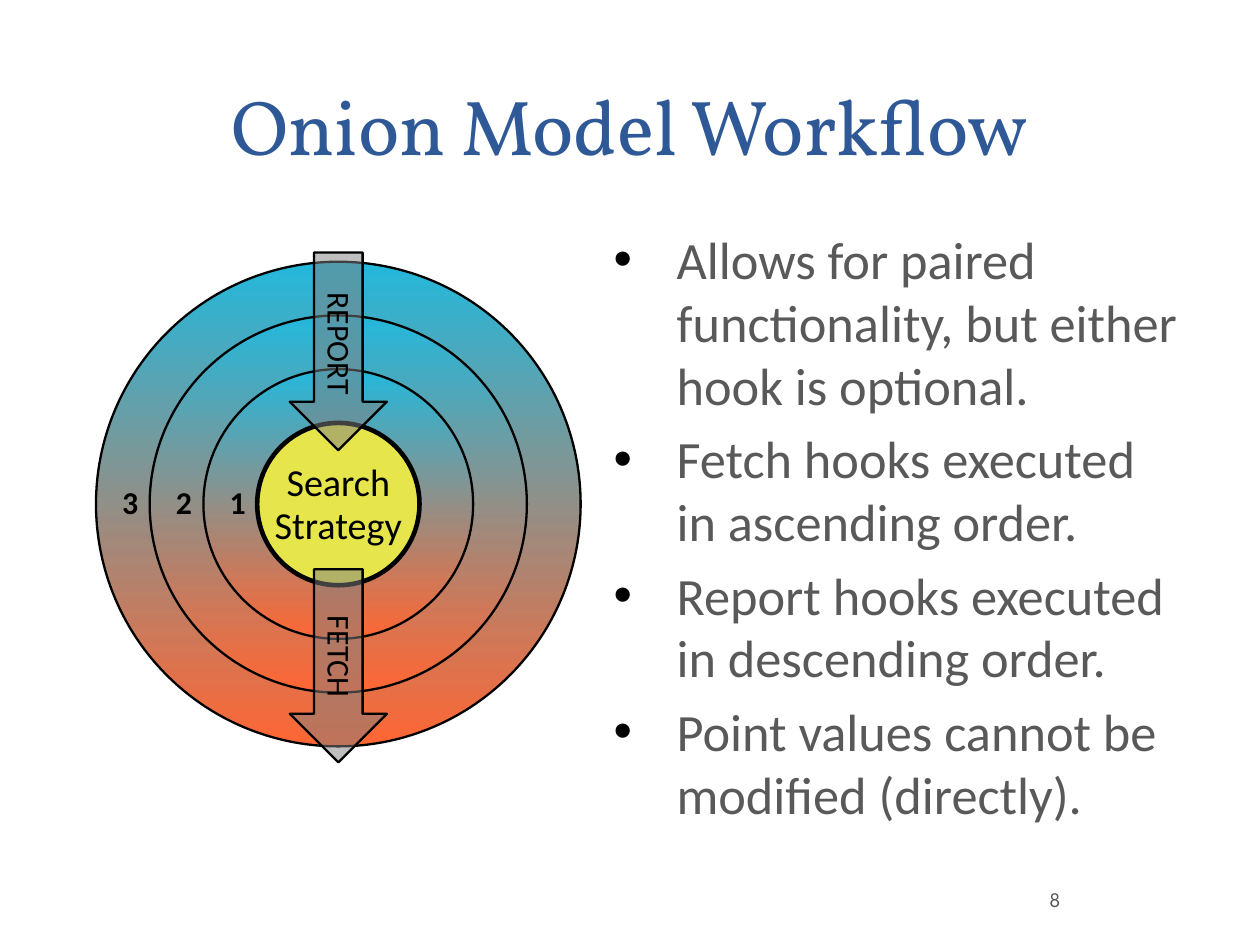
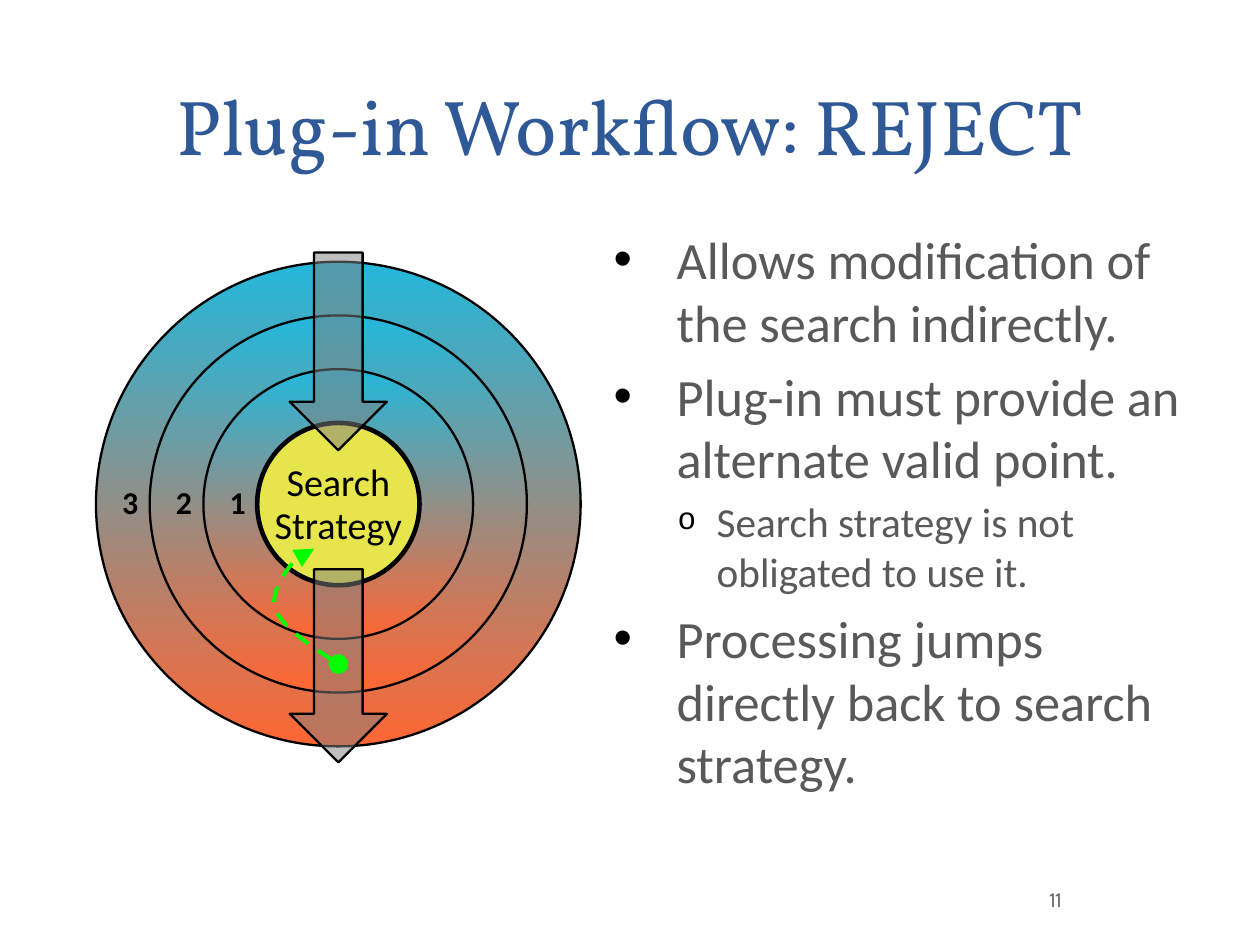
from dataclasses import dataclass

from lxml import etree
from pptx import Presentation
from pptx.dml.color import RGBColor
from pptx.enum.dml import MSO_LINE
from pptx.enum.shapes import MSO_SHAPE
from pptx.enum.text import MSO_ANCHOR, MSO_AUTO_SIZE, PP_ALIGN
from pptx.oxml.ns import qn
from pptx.shapes.autoshape import Shape
from pptx.slide import Slide
from pptx.text.text import TextFrame
from pptx.util import Inches, Pt

ELLIPSE = MSO_SHAPE.OVAL
DOWN_ARROW = MSO_SHAPE.DOWN_ARROW
MIDDLE = MSO_ANCHOR.MIDDLE
TOP = MSO_ANCHOR.TOP
LEFT = PP_ALIGN.LEFT
CENTER = PP_ALIGN.CENTER
GROW = MSO_AUTO_SIZE.SHAPE_TO_FIT_TEXT
DASH = MSO_LINE.DASH

BLUE = RGBColor(0x2F, 0x58, 0x97)
GRAY = RGBColor(0x59, 0x59, 0x59)
BLACK = RGBColor(0, 0, 0)
REPORT_CYAN = RGBColor(0x23, 0xB8, 0xDC)
FETCH_ORANGE = RGBColor(0xFF, 0x66, 0x33)
CORE_YELLOW = RGBColor(0xE6, 0xE6, 0x4C)
ARROW_GRAY = RGBColor(0x80, 0x80, 0x80)
JUMP_GREEN = RGBColor(0, 0xFF, 0)

TITLE_FONT = "Vollkorn"
BODY_FONT = "Calibri"
NUMBER_FONT = "League Spartan"

CM_PER_INCH = 2.54
SLIDE_WIDTH = Inches(28 / CM_PER_INCH)
SLIDE_HEIGHT = Inches(21 / CM_PER_INCH)

CENTER_X, CENTER_Y = 2.96, 4.41
OUTER_DIAMETER, DIAMETER_STEP = 4.24, 0.94
RING_LABELS = ("3", "2", "1")
DIAGRAM_SPACING = 0.93
CURVE_STEPS = 12

Point = tuple[float, float]


@dataclass(frozen=True)
class TextStyle:
    font: str
    size: float
    color: RGBColor
    bold: bool = False
    align: PP_ALIGN = LEFT
    spacing: float | Pt | None = None


@dataclass(frozen=True)
class BulletStyle:
    mark: str
    mark_font: str
    margin: float
    hanging: float
    before: float
    size: int
    mark_percent: int = 100


@dataclass(frozen=True)
class Bullet:
    text: str
    level: int = 0


@dataclass(frozen=True)
class FlowArrow:
    top: float
    height: float
    label: str
    indent: float


@dataclass(frozen=True)
class WorkflowSlide:
    title: str
    number: str
    bullets: tuple[Bullet, ...]
    labelled_arrows: bool = False
    jump: tuple[tuple[Point, Point, Point, Point], ...] = ()


TITLE = TextStyle(TITLE_FONT, 49, BLUE, align=CENTER, spacing=Pt(63.8))
NUMBER = TextStyle(NUMBER_FONT, 13, GRAY)
CORE = TextStyle(BODY_FONT, 24, BLACK, align=CENTER, spacing=DIAGRAM_SPACING)
ARROW = TextStyle(BODY_FONT, 20, BLACK, spacing=DIAGRAM_SPACING)
RING = TextStyle(BODY_FONT, 20, BLACK, True, CENTER, DIAGRAM_SPACING)

BULLET_STYLES = (
    BulletStyle("•", "Arial", 0.55, 0.55, 6.6, 33),
    BulletStyle("o", "Courier New", 0.9, 0.34, 4.4, 26, 75),
)

ARROWS = (
    FlowArrow(4.98, 1.69, "FETCH", 0.31),
    FlowArrow(2.21, 1.73, "REPORT", 0.25),
)

SLIDES = (
    WorkflowSlide(
        "Onion Model Workflow",
        "8",
        (
            Bullet("Allows for paired functionality, but either hook is optional."),
            Bullet("Fetch hooks executed in ascending order."),
            Bullet("Report hooks executed in descending order."),
            Bullet("Point values cannot be modified (directly)."),
        ),
        labelled_arrows=True,
    ),
    WorkflowSlide(
        "Plug-in Workflow: REJECT",
        "11",
        (
            Bullet("Allows modification of the search indirectly."),
            Bullet("Plug-in must provide an alternate valid point."),
            Bullet("Search strategy is not obligated to use it.", 1),
            Bullet("Processing jumps directly back to search strategy."),
        ),
        jump=(
            ((2.96, 5.81), (2.7, 5.64), (2.44, 5.47), (2.4, 5.3)),
            ((2.4, 5.3), (2.37, 5.14), (2.59, 4.82), (2.75, 4.8)),
        ),
    ),
)


def set_insets(frame: TextFrame, left: float, top: float, right: float, bottom: float) -> None:
    frame.margin_left, frame.margin_top = Inches(left), Inches(top)
    frame.margin_right, frame.margin_bottom = Inches(right), Inches(bottom)


def write_lines(frame: TextFrame, lines: tuple[str, ...], style: TextStyle) -> None:
    frame.text = "\n".join(lines)
    for paragraph in frame.paragraphs:
        paragraph.alignment = style.align
        paragraph.line_spacing = style.spacing
        paragraph.font.name = style.font
        paragraph.font.size = Pt(style.size)
        paragraph.font.bold = style.bold
        paragraph.font.color.rgb = style.color


def add_text_frame(slide: Slide, left: float, top: float, width: float, height: float,
                   anchor: MSO_ANCHOR = TOP) -> TextFrame:
    frame = slide.shapes.add_textbox(
        Inches(left), Inches(top), Inches(width), Inches(height)).text_frame
    frame.word_wrap = True
    frame.vertical_anchor = anchor
    return frame


def add_outlined(slide: Slide, preset: MSO_SHAPE, left: float, top: float,
                 width: float, height: float, line_width: float = 1.45) -> Shape:
    shape = slide.shapes.add_shape(
        preset, Inches(left), Inches(top), Inches(width), Inches(height))
    shape.shadow.inherit = False
    shape.line.color.rgb = BLACK
    shape.line.width = Pt(line_width)
    return shape


def add_circle(slide: Slide, diameter: float, line_width: float = 1.45) -> Shape:
    radius = diameter / 2
    return add_outlined(slide, ELLIPSE, CENTER_X - radius, CENTER_Y - radius,
                        diameter, diameter, line_width)


def add_onion(slide: Slide) -> None:
    for ring in range(len(RING_LABELS)):
        layer = add_circle(slide, OUTER_DIAMETER - ring * DIAMETER_STEP)
        layer.fill.gradient()
        layer.fill.gradient_angle = 270
        for stop, position, color in zip(
                layer.fill.gradient_stops, (0, 1), (REPORT_CYAN, FETCH_ORANGE)):
            stop.position = position
            stop.color.rgb = color
    core = add_circle(slide, OUTER_DIAMETER - len(RING_LABELS) * DIAMETER_STEP, 2.89)
    core.fill.solid()
    core.fill.fore_color.rgb = CORE_YELLOW
    frame = core.text_frame
    frame.word_wrap = False
    frame.vertical_anchor = MIDDLE
    set_insets(frame, 0.12, 0.09, 0.12, 0.07)
    write_lines(frame, ("Search", "Strategy"), CORE)


def add_flow_arrow(slide: Slide, arrow: FlowArrow, labelled: bool) -> None:
    width = 0.85
    shape = add_outlined(slide, DOWN_ARROW, CENTER_X - width / 2, arrow.top,
                         width, arrow.height)
    shape.adjustments[0] = 0.5
    shape.adjustments[1] = 0.5
    shape.fill.solid()
    shape.fill.fore_color.rgb = ARROW_GRAY
    tint = shape._element.spPr.find(qn("a:solidFill")).find(qn("a:srgbClr"))
    etree.SubElement(tint, qn("a:alpha"), val="50000")
    if labelled:
        frame = shape.text_frame
        frame.word_wrap = True
        frame.vertical_anchor = MIDDLE
        frame._txBody.bodyPr.set("vert", "vert")
        write_lines(frame, (arrow.label,), ARROW)
        properties = frame.paragraphs[0]._p.get_or_add_pPr()
        properties.set("marL", str(Inches(arrow.indent)))


def add_ring_labels(slide: Slide) -> None:
    for ring, label in enumerate(RING_LABELS):
        frame = add_text_frame(slide, 0.97 + ring * DIAMETER_STEP / 2, 4.2, 0.25, 0.41)
        frame.auto_size = GROW
        write_lines(frame, (label,), RING)


def add_bullets(slide: Slide, bullets: tuple[Bullet, ...]) -> None:
    frame = add_text_frame(slide, 5.26, 1.93, 5.2, 5.45)
    set_insets(frame, 0.11, 0.06, 0.11, 0.06)
    for index, bullet in enumerate(bullets):
        style = BULLET_STYLES[bullet.level]
        paragraph = frame.add_paragraph() if index else frame.paragraphs[0]
        paragraph.text = bullet.text
        paragraph.level = bullet.level
        properties = paragraph._p.get_or_add_pPr()
        properties.set("marL", str(Inches(style.margin)))
        properties.set("indent", str(-Inches(style.hanging)))
        mark_color = etree.SubElement(properties, qn("a:buClr"))
        etree.SubElement(mark_color, qn("a:srgbClr"), val=str(BLACK))
        etree.SubElement(properties, qn("a:buSzPct"), val=str(style.mark_percent * 1000))
        etree.SubElement(properties, qn("a:buFont"), typeface=style.mark_font)
        etree.SubElement(properties, qn("a:buChar"), char=style.mark)
        if index:
            paragraph.space_before = Pt(style.before)
        paragraph.font.name = BODY_FONT
        paragraph.font.size = Pt(style.size)
        paragraph.font.color.rgb = GRAY


def curve_point(a: Point, b: Point, c: Point, d: Point, t: float) -> tuple[int, int]:
    u = 1 - t
    x, y = (u**3 * p + 3 * u**2 * t * q + 3 * u * t**2 * r + t**3 * s
            for p, q, r, s in zip(a, b, c, d))
    return Inches(x), Inches(y)


def add_jump(slide: Slide, curves: tuple[tuple[Point, Point, Point, Point], ...]) -> None:
    start_x, start_y = curves[0][0]
    builder = slide.shapes.build_freeform(Inches(start_x), Inches(start_y))
    builder.add_line_segments(
        [curve_point(*curve, step / CURVE_STEPS)
         for curve in curves for step in range(1, CURVE_STEPS + 1)],
        close=False)
    jump = builder.convert_to_shape()
    jump.shadow.inherit = False
    jump.fill.background()
    jump.line.color.rgb = JUMP_GREEN
    jump.line.width = Pt(2.5)
    jump.line.dash_style = DASH
    outline = jump._element.spPr.find(qn("a:ln"))
    for end, kind in (("a:headEnd", "oval"), ("a:tailEnd", "triangle")):
        etree.SubElement(outline, qn(end), type=kind, w="lg", len="lg")


def add_workflow(slide: Slide, content: WorkflowSlide) -> None:
    title = add_text_frame(slide, 0.55, 0.37, 9.92, 1.38, MIDDLE)
    set_insets(title, 0.11, 0.04, 0.11, 0.06)
    write_lines(title, (content.title,), TITLE)
    add_bullets(slide, content.bullets)
    number = add_text_frame(slide, 9.15, 7.59, 0.68, 0.55, MIDDLE)
    set_insets(number, 0.03, 0.06, 0.06, 0.06)
    write_lines(number, (content.number,), NUMBER)
    add_onion(slide)
    for arrow in ARROWS:
        add_flow_arrow(slide, arrow, content.labelled_arrows)
    add_ring_labels(slide)
    if content.jump:
        add_jump(slide, content.jump)


def main() -> None:
    deck = Presentation()
    deck.slide_width, deck.slide_height = SLIDE_WIDTH, SLIDE_HEIGHT
    blank = deck.slide_layouts[6]
    for content in SLIDES:
        add_workflow(deck.slides.add_slide(blank), content)
    deck.save("out.pptx")


if __name__ == "__main__":
    main()
